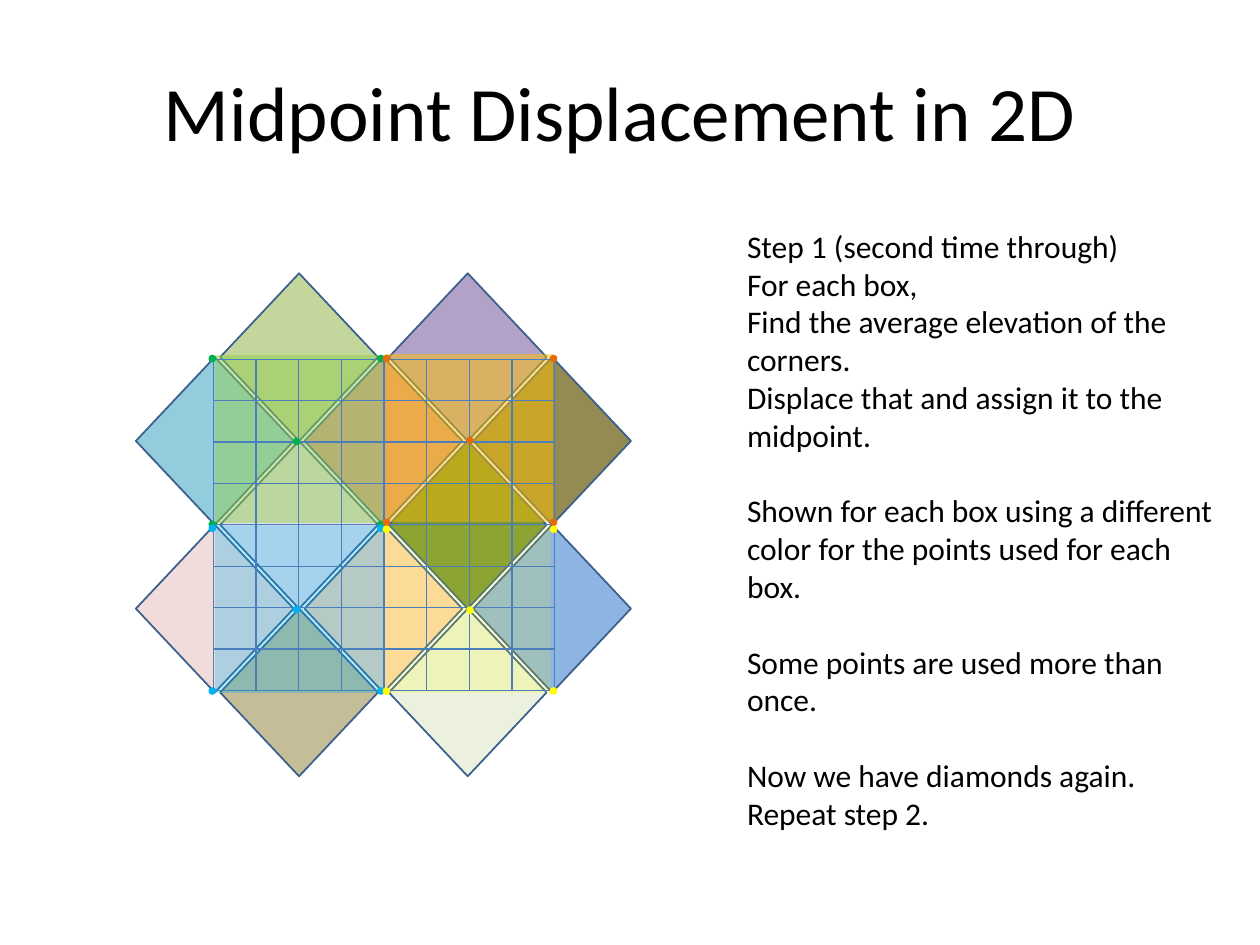
from pptx import Presentation
from pptx.dml.color import RGBColor
from pptx.enum.shapes import MSO_CONNECTOR, MSO_SHAPE
from pptx.enum.text import MSO_ANCHOR, PP_ALIGN
from pptx.oxml.ns import qn
from pptx.util import Cm, Pt
from lxml.etree import SubElement

FONT = "Calibri"
BLACK = RGBColor(0x00, 0x00, 0x00)
EDGE = RGBColor(0x3A, 0x5F, 0x8C)
GRID = RGBColor(0x4B, 0x7E, 0xBC)
LIME = RGBColor(0x92, 0xD0, 0x50)
GOLD = RGBColor(0xFF, 0xC0, 0x00)
GREEN = RGBColor(0x00, 0xB0, 0x50)
ORANGE = RGBColor(0xE4, 0x6C, 0x0A)
BLUE = RGBColor(0x00, 0xB0, 0xF0)
YELLOW = RGBColor(0xFF, 0xFF, 0x00)

# Diamonds: column, row, fill; back to front
GEMS = [
    (3, 2, RGBColor(0x77, 0x93, 0x3C)),
    (4, 1, RGBColor(0x94, 0x8A, 0x54)),
    (4, 3, RGBColor(0x8E, 0xB4, 0xE3)),
    (3, 0, RGBColor(0xB3, 0xA2, 0xC7)),
    (1, 2, RGBColor(0xE6, 0xE0, 0xEC)),
    (3, 4, RGBColor(0xEB, 0xF1, 0xDE)),
    (2, 3, RGBColor(0xFC, 0xD5, 0xB5)),
    (1, 4, RGBColor(0xC4, 0xBD, 0x97)),
    (0, 3, RGBColor(0xF2, 0xDC, 0xDB)),
    (0, 1, RGBColor(0x93, 0xCD, 0xDD)),
    (1, 0, RGBColor(0xC3, 0xD6, 0x9B)),
    (2, 1, RGBColor(0xD9, 0x96, 0x94)),
]

# Boxes: left, top, fill, opacity in percent
TILES = [
    (4.34, 7.16, LIME, 50),
    (7.77, 7.14, GOLD, 50),
    (7.72, 10.59, YELLOW, 16),
    (4.34, 10.59, BLUE, 28),
]

# Points of each box: left, right, top, bottom, colour
DOTS = [
    (4.24, 7.64, 7.19, 10.53, GREEN),
    (7.75, 11.12, 7.19, 10.49, ORANGE),
    (4.24, 7.64, 10.61, 13.89, BLUE),
    (7.75, 11.12, 10.63, 13.89, YELLOW),
]

# Notes: text, starts a new group
NOTES = [
    ("Step 1 (second time through)", False),
    ("For each box,", False),
    ("Find the average elevation of the corners.", False),
    ("Displace that and assign it to the midpoint.", False),
    ("Shown for each box using a different color for the points used "
     "for each box.", True),
    ("Some points are used more than once.", True),
    ("Now we have diamonds again.  Repeat step 2.", True),
]


def add_form(slide, kind, x, y, w, h, fill, edge=None, width=1):
    form = slide.shapes.add_shape(kind, Cm(x), Cm(y), Cm(w), Cm(h))
    form.shadow.inherit = False
    form.fill.solid()
    form.fill.fore_color.rgb = fill
    if edge is None:
        form.line.fill.background()
    else:
        form.line.color.rgb = edge
        form.line.width = Pt(width)
    return form


def add_tile(slide, x, y, fill, percent):
    tile = add_form(slide, MSO_SHAPE.RECTANGLE, x, y, 3.38, 3.38, fill)
    color = tile.fill._xPr.find(qn("a:solidFill"))[0]
    SubElement(color, qn("a:alpha")).set("val", str(percent * 1000))


def add_dot(slide, x, y, color):
    add_form(slide, MSO_SHAPE.OVAL, x, y, 0.08, 0.08, color, color, 2)


def add_line(slide, x1, y1, x2, y2):
    line = slide.shapes.add_connector(
        MSO_CONNECTOR.STRAIGHT, Cm(x1), Cm(y1), Cm(x2), Cm(y2))
    line.line.color.rgb = GRID
    line.line.width = Pt(0.75)
    SubElement(line._element.spPr, qn("a:effectLst"))


def add_grid(slide, left, top, right, bottom, count):
    for i in range(count + 1):
        y = top + (bottom - top) * i / count
        add_line(slide, left, y, right, y)
    for i in range(count + 1):
        x = left + (right - left) * i / count
        add_line(slide, x, bottom, x, top)


def add_text(slide, x, y, w, h, items, size, align=PP_ALIGN.LEFT,
             anchor=MSO_ANCHOR.TOP):
    frame = slide.shapes.add_textbox(Cm(x), Cm(y), Cm(w), Cm(h)).text_frame
    frame.word_wrap = True
    frame.vertical_anchor = anchor
    for i, (text, gap) in enumerate(items):
        para = frame.add_paragraph() if i else frame.paragraphs[0]
        para.text = text
        para.alignment = align
        if gap:
            para.space_before = Pt(21.6)
        font = para.runs[0].font
        font.name = FONT
        font.size = Pt(size)
        font.color.rgb = BLACK


def main():
    deck = Presentation()
    deck.slide_width, deck.slide_height = Cm(25.4), Cm(19.05)
    slide = deck.slides.add_slide(deck.slide_layouts[6])

    # Diamonds on a staggered lattice
    for col, row, fill in GEMS:
        add_form(slide, MSO_SHAPE.DIAMOND, 2.74 + 1.7 * col, 5.51 + 1.69 * row,
                 3.18, 3.38, fill, EDGE)

    # Title and notes
    add_text(slide, 1.07, 0.64, 22.86, 3.18,
             [("Midpoint Displacement in 2D", False)], 44,
             PP_ALIGN.CENTER, MSO_ANCHOR.MIDDLE)
    add_text(slide, 14.81, 4.45, 10.16, 12.57, NOTES, 18)

    # Boxes under the grid
    for tile in TILES:
        add_tile(slide, *tile)
    add_grid(slide, 4.3, 7.24, 11.18, 13.92, 8)

    # Corners and midpoint of each box
    for left, right, top, bottom, color in DOTS:
        for x in (left, right):
            for y in (top, bottom):
                add_dot(slide, x, y, color)
        add_dot(slide, (left + right) / 2, (top + bottom) / 2, color)

    deck.save("out.pptx")


if __name__ == "__main__":
    main()
